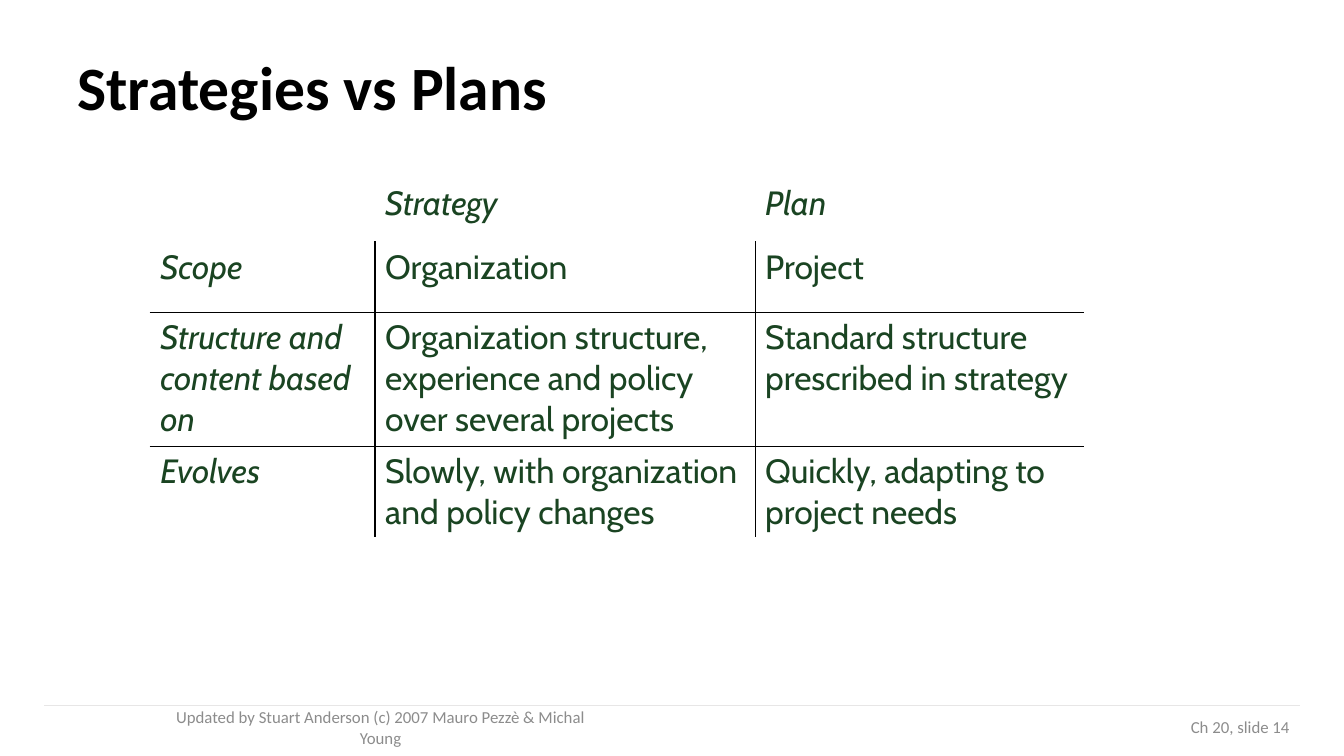
from lxml.etree import SubElement
from pptx import Presentation
from pptx.dml.color import RGBColor
from pptx.enum.shapes import MSO_CONNECTOR
from pptx.enum.text import MSO_ANCHOR, PP_ALIGN
from pptx.oxml.ns import qn
from pptx.util import Inches, Pt

COLORS = {
    "title": "000000",
    "table_text": "1A4422",
    "border": "000000",
    "footer_text": "8C8C8C",
    "footer_rule": "E7E6E6",
}

COMPARISON = [
    ["", "Strategy", "Plan"],
    ["Scope", "Organization", "Project"],
    ["Structure and content based on",
     "Organization structure, experience and policy over several projects",
     "Standard structure prescribed in strategy"],
    ["Evolves", "Slowly, with organization and policy changes",
     "Quickly, adapting to project needs"],
]


def style_font(p, name, size, color, bold=False, italic=False):
    p.font.name = name
    p.font.size = Pt(size)
    p.font.bold = bold
    p.font.italic = italic
    p.font.color.rgb = RGBColor.from_string(COLORS[color])


def add_text(slide, box, text, size, color, align=PP_ALIGN.LEFT, bold=False):
    tf = slide.shapes.add_textbox(*map(Inches, box)).text_frame
    tf.word_wrap = True
    tf.vertical_anchor = MSO_ANCHOR.MIDDLE
    p = tf.paragraphs[0]
    p.text = text
    p.alignment = align
    style_font(p, "Calibri", size, color, bold)
    return p


def add_title(slide, box, text):
    p = add_text(slide, box, text, 44, "title", bold=True)
    p.line_spacing = 0.9


def add_border(cell, side):
    ln = SubElement(cell._tc.get_or_add_tcPr(), qn(f"a:ln{side}"), w=str(Pt(1)))
    fill = SubElement(ln, qn("a:solidFill"))
    SubElement(fill, qn("a:srgbClr"), val=COLORS["border"])


def add_comparison(slide, box, rows, col_widths, row_heights):
    table = slide.shapes.add_table(
        len(rows), len(rows[0]), *map(Inches, box)).table
    table.first_row = False
    table.horz_banding = False
    for column, width in zip(table.columns, col_widths):
        column.width = Inches(width)
    for row, height in zip(table.rows, row_heights):
        row.height = Inches(height)

    last_row, last_col = len(rows) - 1, len(rows[0]) - 1
    for i, texts in enumerate(rows):
        for j, text in enumerate(texts):
            cell = table.cell(i, j)
            inner_sides = {
                "L": i > 0 and j > 0,
                "R": i > 0 and j < last_col,
                "T": i > 1,
                "B": 0 < i < last_row,
            }
            for side, shown in inner_sides.items():
                if shown:
                    add_border(cell, side)
            cell.fill.background()
            p = cell.text_frame.paragraphs[0]
            p.text = text
            style_font(p, "Cabin", 24, "table_text", italic=i == 0 or j == 0)


def add_footer(slide, box, credit, number):
    left, top, width, height = box
    rule = slide.shapes.add_connector(
        MSO_CONNECTOR.STRAIGHT, Inches(left), Inches(top),
        Inches(left + width), Inches(top))
    rule.line.width = Pt(0.75)
    rule.line.color.rgb = RGBColor.from_string(COLORS["footer_rule"])
    SubElement(rule._element.spPr, qn("a:effectLst"))

    text_top, text_height = top + 0.08, height - 0.08
    add_text(slide, (left + 1, text_top, 4.67, text_height), credit,
             12, "footer_text", PP_ALIGN.CENTER)
    number_width = 3.11
    add_text(slide, (left + width - number_width, text_top, number_width, text_height),
             number, 12, "footer_text", PP_ALIGN.RIGHT)


def main():
    prs = Presentation()
    prs.slide_width = Inches(13.33)
    prs.slide_height = Inches(7.5)
    slide = prs.slides.add_slide(prs.slide_layouts[6])
    add_title(slide, (0.67, 0.3, 12, 1.2), "Strategies vs Plans")
    add_comparison(slide, (1.49, 1.77, 9.26, 3.55), COMPARISON,
                   (2.23, 3.77, 3.26), (0.63, 0.7, 1.33, 0.89))
    add_footer(slide, (0.44, 7, 12.45, 0.35),
               "Updated by Stuart Anderson (c) 2007 Mauro Pezzè & Michal Young",
               "Ch 20, slide 14")
    prs.save("out.pptx")


if __name__ == "__main__":
    main()
